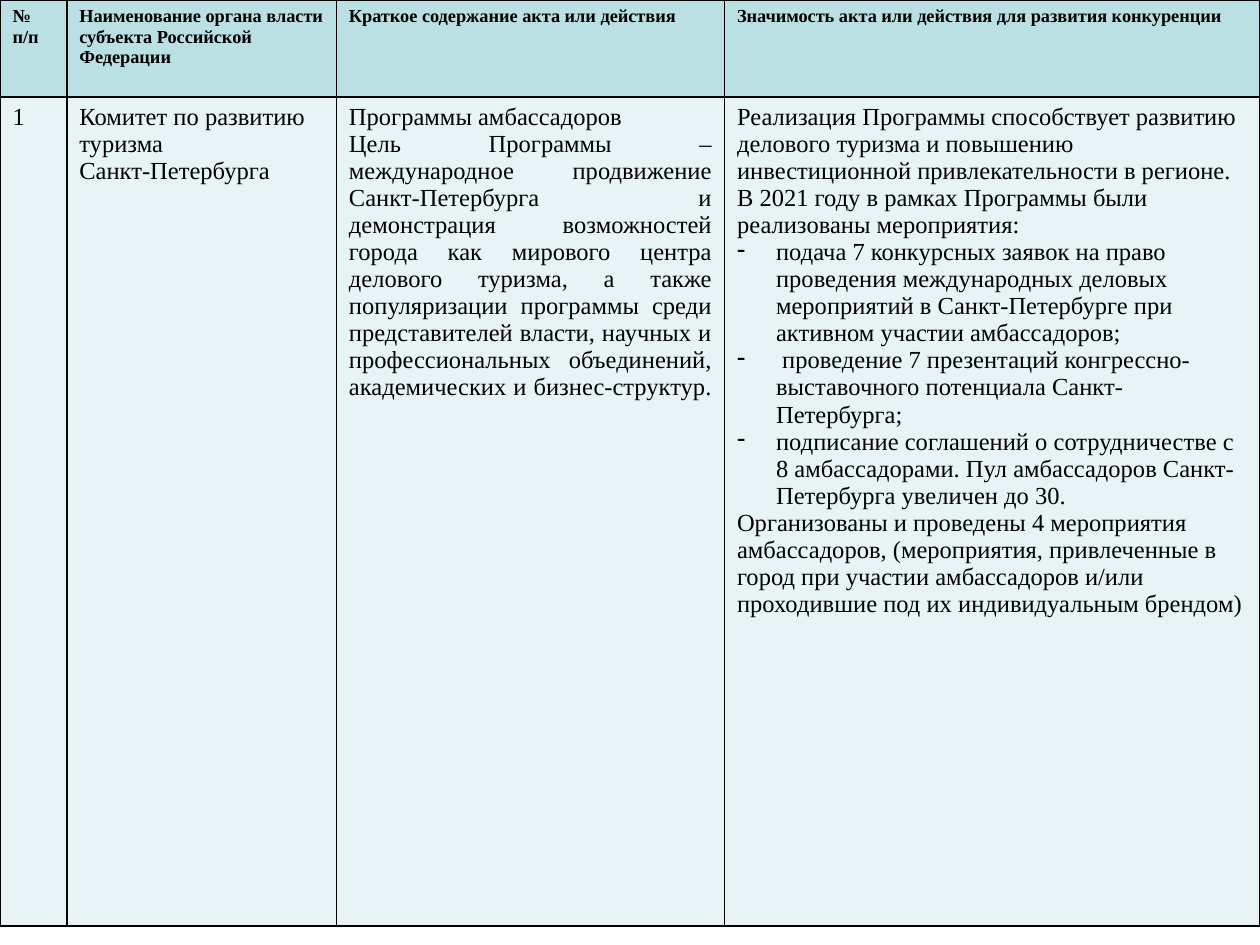
from pptx import Presentation
from pptx.dml.color import RGBColor
from pptx.enum import text
from pptx.oxml.ns import qn
from pptx.util import Inches, Pt
from lxml import etree

COLORS = {"header": "BBE0E3", "body": "E7F3F4", "ink": "000000"}
COL_WIDTHS = [0.53, 2.14, 3.08, 4.25]
ROW_HEIGHTS = [0.77, 6.58]

HEADERS = [
    "№ п/п",
    "Наименование органа власти субъекта Российской Федерации",
    "Краткое содержание акта или действия",
    "Значимость акта или действия для развития конкуренции",
]
AUTHORITY = ["Комитет по развитию туризма", "Санкт-Петербурга"]
SUMMARY = [
    "Программы амбассадоров",
    "Цель Программы – международное продвижение Санкт-Петербурга и "
    "демонстрация возможностей города как мирового центра делового туризма, "
    "а также популяризации программы среди представителей власти, научных и "
    "профессиональных объединений, академических и бизнес-структур. ",
]
IMPACT = [
    "Реализация Программы способствует развитию делового туризма и повышению "
    "инвестиционной привлекательности в регионе.",
    "В 2021 году в рамках Программы были реализованы мероприятия:",
    "подача 7 конкурсных заявок на право проведения международных деловых "
    "мероприятий в Санкт-Петербурге при активном участии амбассадоров;",
    " проведение 7 презентаций конгрессно-выставочного потенциала "
    "Санкт-Петербурга;",
    "подписание соглашений о сотрудничестве с 8 амбассадорами. Пул "
    "амбассадоров Санкт-Петербурга увеличен до 30.",
    "Организованы и проведены 4 мероприятия амбассадоров, (мероприятия, "
    "привлеченные в город при участии амбассадоров и/или проходившие под их "
    "индивидуальным брендом)",
]
IMPACT_BULLETS = range(2, 5)


class SlideBuilder:
    font = "Times New Roman"
    border = Pt(1)
    indent = Inches(0.31)

    def __init__(self, slide):
        self.slide = slide

    def table(self, widths, heights):
        frame = self.slide.shapes.add_table(
            len(heights), len(widths), 0, 0,
            Inches(sum(widths)), Inches(sum(heights)))
        table = frame.table
        for column, width in zip(table.columns, widths):
            column.width = Inches(width)
        for row, height in zip(table.rows, heights):
            row.height = Inches(height)
        return table

    def cell(self, cell, lines, fill, size, bold=False, align=None, bullets=()):
        self.borders(cell)
        cell.fill.solid()
        cell.fill.fore_color.rgb = RGBColor.from_string(COLORS[fill])
        tf = cell.text_frame
        tf.text = "\n".join(lines)
        for i, p in enumerate(tf.paragraphs):
            p.alignment = align
            if i in bullets:
                self.bullet(p)
            for r in p.runs:
                r.font.name = self.font
                r.font.size = Pt(size)
                r.font.bold = bold
                r.font.color.rgb = RGBColor.from_string(COLORS["ink"])

    def bullet(self, p):
        pPr = p._p.get_or_add_pPr()
        pPr.set("marL", str(self.indent))
        pPr.set("indent", str(-self.indent))
        etree.SubElement(pPr, qn("a:buFontTx"))
        etree.SubElement(pPr, qn("a:buChar"), char="-")

    def borders(self, cell):
        tcPr = cell._tc.get_or_add_tcPr()
        for side in ("lnL", "lnR", "lnT", "lnB"):
            ln = etree.SubElement(tcPr, qn("a:" + side), w=str(self.border))
            fill = etree.SubElement(ln, qn("a:solidFill"))
            etree.SubElement(fill, qn("a:srgbClr"), val=COLORS["ink"])


def main():
    prs = Presentation()
    prs.slide_width, prs.slide_height = Inches(10), Inches(7.5)
    s = SlideBuilder(prs.slides.add_slide(prs.slide_layouts[6]))
    table = s.table(COL_WIDTHS, ROW_HEIGHTS)

    # Header row
    for col, header in enumerate(HEADERS):
        s.cell(table.cell(0, col), [header], "header", 10.5, bold=True)

    # Programme row
    s.cell(table.cell(1, 0), ["1"], "body", 14)
    s.cell(table.cell(1, 1), AUTHORITY, "body", 14)
    s.cell(table.cell(1, 2), SUMMARY, "body", 14, align=text.PP_ALIGN.JUSTIFY)
    s.cell(table.cell(1, 3), IMPACT, "body", 14, bullets=IMPACT_BULLETS)

    prs.save("out.pptx")


if __name__ == "__main__":
    main()
